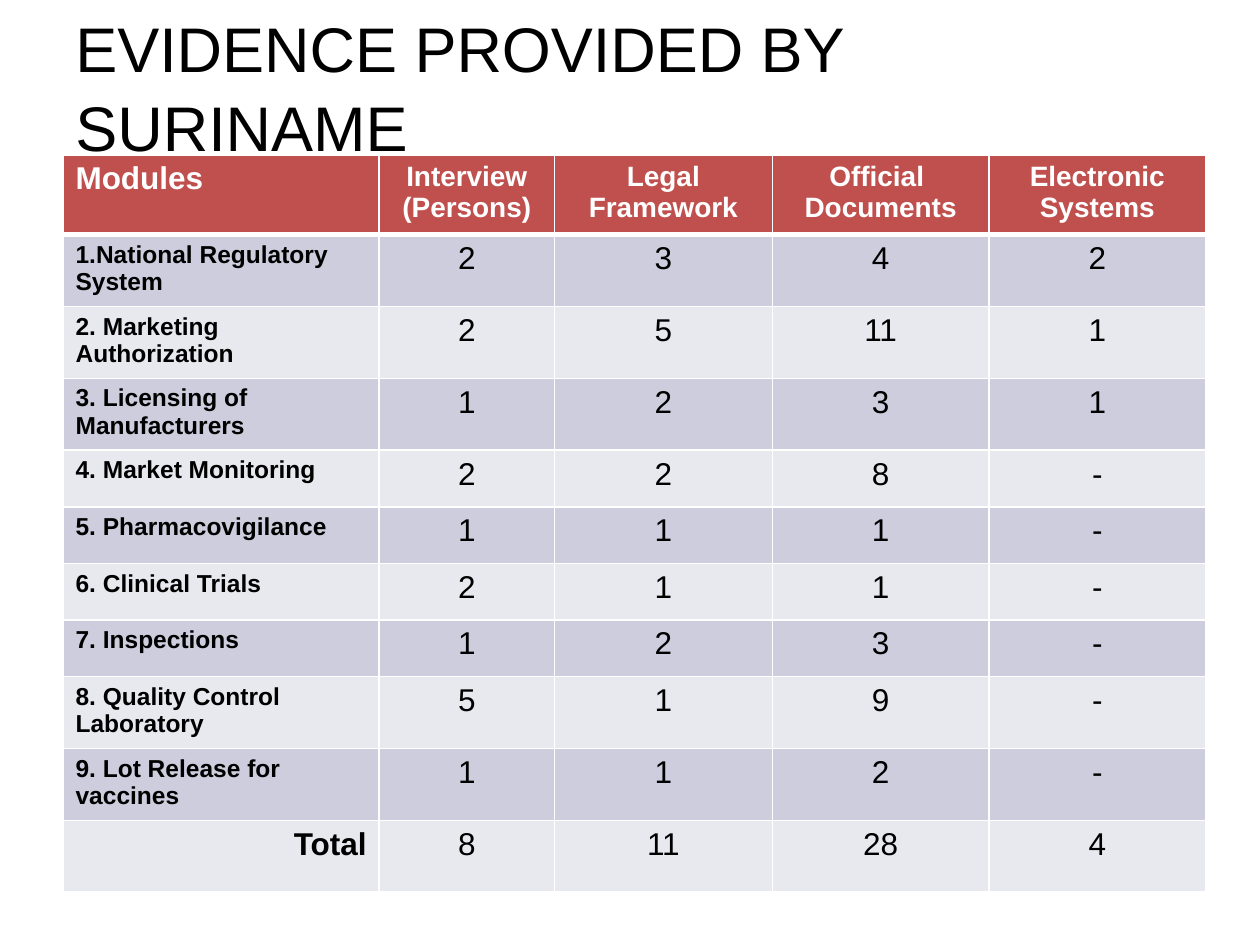
from lxml import etree
from pptx import Presentation, util as u
from pptx.dml import color
from pptx.enum import text
from pptx.oxml import ns

WIDTH, HEIGHT = 10, 7.5
FONT = "Arial"
BLACK, WHITE = "000000", "FFFFFF"
HEADER_FILL, BANDS = "C0504D", ("CDCDDE", "E8E8EF")
COLUMN_WIDTHS = [2.51, 1.39, 1.73, 1.72, 1.72]
HEADER_HEIGHT, TALL, SHORT = 0.63, 0.57, 0.45
HEADINGS = ["Modules", "Interview\n(Persons)", "Legal Framework",
            "Official \nDocuments", "Electronic Systems"]
MODULES = [
    ("1.National Regulatory System", TALL, "2", "3", "4", "2"),
    ("2. Marketing Authorization", TALL, "2", "5", "11", "1"),
    ("3. Licensing of Manufacturers", TALL, "1", "2", "3", "1"),
    ("4. Market Monitoring", SHORT, "2", "2", "8", "-"),
    ("5. Pharmacovigilance", SHORT, "1", "1", "1", "-"),
    ("6. Clinical Trials", SHORT, "2", "1", "1", "-"),
    ("7. Inspections", SHORT, "1", "2", "3", "-"),
    ("8. Quality Control Laboratory", TALL, "5", "1", "9", "-"),
    ("9. Lot Release for vaccines", TALL, "1", "1", "2", "-"),
]
TOTAL = ("Total", TALL, "8", "11", "28", "4")
LEFT, CENTER, RIGHT = (text.PP_ALIGN.LEFT, text.PP_ALIGN.CENTER,
                       text.PP_ALIGN.RIGHT)


def rgb(value):
    """Turn a hex string into a colour."""
    return color.RGBColor.from_string(value)


def write(frame, words, size, ink, bold=False, align=LEFT):
    """Put words in a text frame, with one format for all its runs."""
    frame.text = words
    for paragraph in frame.paragraphs:
        paragraph.alignment = align
        for run in paragraph.runs:
            run.font.name = FONT
            run.font.size = u.Pt(size)
            run.font.bold = bold
            run.font.color.rgb = rgb(ink)


def add_borders(cell, top=1, bottom=1):
    """Draw white borders of the given point widths around a cell."""
    properties = cell._tc.get_or_add_tcPr()
    for side, points in (("L", 1), ("R", 1), ("T", top), ("B", bottom)):
        line = etree.SubElement(properties, ns.qn(f"a:ln{side}"),
                                w=str(u.Pt(points)))
        fill = etree.SubElement(line, ns.qn("a:solidFill"))
        etree.SubElement(fill, ns.qn("a:srgbClr"), val=WHITE)


def fill_cell(cell, fill, words, top=1, bottom=1, **style):
    """Give a cell its borders, fill and text."""
    add_borders(cell, top, bottom)
    cell.fill.solid()
    cell.fill.fore_color.rgb = rgb(fill)
    write(cell.text_frame, words, **style)


def add_title(slide, left, top, width, height):
    """Place the slide title in its box."""
    title = slide.shapes.add_textbox(*map(u.Inches, (left, top, width, height)))
    frame = title.text_frame
    frame.word_wrap = True
    frame.vertical_anchor = text.MSO_ANCHOR.MIDDLE
    write(frame, "EVIDENCE PROVIDED BY SURINAME", 36, BLACK)
    frame.paragraphs[0].line_spacing = 1.05


def add_evidence_table(slide, left, top, width, height):
    """Place the table of evidence per module, scaled to its box."""
    body = [*MODULES, TOTAL]
    row_heights = [HEADER_HEIGHT] + [row[1] for row in body]
    table = slide.shapes.add_table(
        len(row_heights), len(COLUMN_WIDTHS),
        *map(u.Inches, (left, top, width, height))).table
    for column, share in zip(table.columns, COLUMN_WIDTHS):
        column.width = u.Inches(width * share / sum(COLUMN_WIDTHS))
    for row, share in zip(table.rows, row_heights):
        row.height = u.Inches(height * share / sum(row_heights))

    for c, heading in enumerate(HEADINGS):
        fill_cell(table.cell(0, c), HEADER_FILL, heading, bottom=3,
                  size=16 if c else 18, ink=WHITE, bold=True,
                  align=CENTER if c else LEFT)
    for r, (module, _, *counts) in enumerate(body, start=1):
        band, top_border = BANDS[(r - 1) % 2], 3 if r == 1 else 1
        is_total = r == len(body)
        fill_cell(table.cell(r, 0), band, module, top=top_border,
                  size=18 if is_total else 14, ink=BLACK, bold=True,
                  align=RIGHT if is_total else LEFT)
        for c, count in enumerate(counts, start=1):
            fill_cell(table.cell(r, c), band, count, top=top_border,
                      size=18, ink=BLACK, align=CENTER)


def main():
    """Build and save the slide."""
    deck = Presentation()
    deck.slide_width, deck.slide_height = u.Inches(WIDTH), u.Inches(HEIGHT)
    slide = deck.slides.add_slide(deck.slide_layouts[6])
    margin = 0.05 * WIDTH
    add_title(slide, margin, 0.05, WIDTH - 2 * margin, HEIGHT / 6)
    add_evidence_table(slide, margin, 1.23, sum(COLUMN_WIDTHS), 0.78 * HEIGHT)
    deck.save("out.pptx")


if __name__ == "__main__":
    main()
